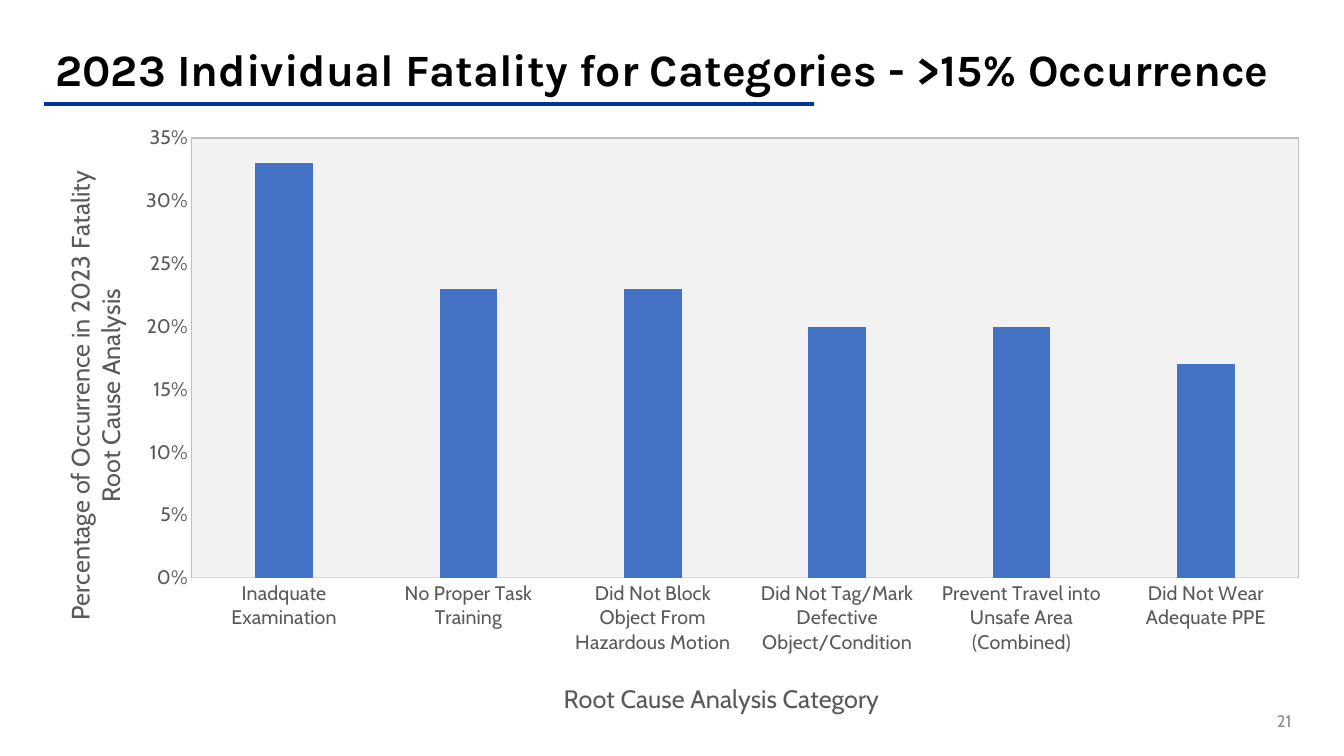
"""Build the 2023 root cause category slide with its column chart."""
import pptx
import pptx.chart.data
import pptx.dml.color
import pptx.enum.chart
import pptx.enum.shapes
import pptx.enum.text
import pptx.oxml
import pptx.oxml.ns
import pptx.util

WIDTH, HEIGHT = 13.33, 7.5
MARGIN = 0.45
CONTENT = WIDTH - 2 * MARGIN
HEADING = "2023 Individual Fatality for Categories - >15% Occurrence"
PAGE = "21"
CATEGORY_TITLE = "Root Cause Analysis Category"
VALUE_TITLE = "Percentage of Occurrence in 2023 Fatality Root Cause Analysis"
CAUSES = {
    "Inadquate Examination": 0.33,
    "No Proper Task Training": 0.23,
    "Did Not Block Object From Hazardous Motion": 0.23,
    "Did Not Tag/Mark Defective Object/Condition": 0.2,
    "Prevent Travel into Unsafe Area (Combined)": 0.2,
    "Did Not Wear Adequate PPE": 0.17,
}
COLORS = {"black": "000000", "rule": "0033A0", "page": "8C8C8C", "label": "595959",
          "bar": "4472C4", "plot": "F2F2F2", "border": "BFBFBF", "axis": "D9D9D9"}
ALIGN = pptx.enum.text.PP_ALIGN
inches = pptx.util.Inches
qn = pptx.oxml.ns.qn


def rgb(name):
    return pptx.dml.color.RGBColor.from_string(COLORS[name])


def style_font(font, size, color, face="Cabin", bold=False):
    font.name, font.size, font.bold = face, pptx.util.Pt(size), bold
    font.color.rgb = rgb(color)


def write(frame, text, size, color, align=None, spacing=None, **font):
    paragraph = frame.paragraphs[0]
    paragraph.alignment, paragraph.line_spacing = align, spacing
    run = paragraph.add_run()
    run.text = text
    style_font(run.font, size, color, **font)


def place(part, index, **shares):
    """Give a chart part a manual layout in shares of the chart's size."""
    for layout in part.findall(qn("c:layout")):
        part.remove(layout)
    target = '<c:layoutTarget val="inner"/>' if "w" in shares else ""
    modes = '<c:xMode val="edge"/><c:yMode val="edge"/>'
    sizes = "".join(f'<c:{key} val="{share}"/>' for key, share in shares.items())
    part.insert(index, pptx.oxml.parse_xml(
        f'<c:layout {pptx.oxml.ns.nsdecls("c")}><c:manualLayout>'
        f'{target}{modes}{sizes}</c:manualLayout></c:layout>'))


def style_axis(axis, title, x, y):
    axis.has_major_gridlines = False
    axis.major_tick_mark = axis.minor_tick_mark = pptx.enum.chart.XL_TICK_MARK.NONE
    style_font(axis.tick_labels.font, 14, "label")
    write(axis.axis_title.text_frame, title, 18, "label")
    place(axis.axis_title._element, 1, x=x, y=y)


def add_cause_chart(slide):
    causes = pptx.chart.data.CategoryChartData(number_format="0%")
    causes.categories = list(CAUSES)
    causes.add_series("Series 1", list(CAUSES.values()))
    chart = slide.shapes.add_chart(
        pptx.enum.chart.XL_CHART_TYPE.COLUMN_CLUSTERED, inches(MARGIN), inches(1.17),
        inches(CONTENT), inches(6.03), causes).chart
    chart.has_title = chart.has_legend = False
    style_font(chart.font, 10, "black")

    columns = chart.plots[0]
    columns.vary_by_categories = False
    columns.gap_width, columns.overlap = 219, -27
    bars = columns.series[0].format
    bars.fill.solid()
    bars.fill.fore_color.rgb = rgb("bar")

    style_axis(chart.category_axis, CATEGORY_TITLE, 0.41, 0.92)
    chart.category_axis.format.line.color.rgb = rgb("axis")
    chart.category_axis.format.line.width = pptx.util.Pt(0.75)

    percent = chart.value_axis
    style_axis(percent, VALUE_TITLE, 0.01, 0.08)
    percent.minimum_scale, percent.maximum_scale, percent.major_unit = 0, 0.35, 0.05
    percent.tick_labels.number_format = "0%"
    percent.tick_labels.number_format_is_linked = False
    percent.format.line.fill.background()

    plot_area = columns._element.getparent()
    place(plot_area, 0, x=0.117, y=0.033, w=0.883, h=0.724)
    plot_area.append(pptx.oxml.parse_xml(
        f'<c:spPr {pptx.oxml.ns.nsdecls("c", "a")}>'
        f'<a:solidFill><a:srgbClr val="{COLORS["plot"]}"/></a:solidFill>'
        f'<a:ln w="9525"><a:solidFill><a:srgbClr val="{COLORS["border"]}"/></a:solidFill></a:ln>'
        '</c:spPr>'))


def main():
    deck = pptx.Presentation()
    deck.slide_width, deck.slide_height = inches(WIDTH), inches(HEIGHT)
    slide = deck.slides.add_slide(deck.slide_layouts[5])

    rule = slide.shapes.add_connector(
        pptx.enum.shapes.MSO_CONNECTOR.STRAIGHT,
        inches(0.44), inches(1.03), inches(8.07), inches(1.03))
    rule.line.color.rgb = rgb("rule")
    rule.line.width = pptx.util.Pt(3)
    rule._element.spPr.append(pptx.oxml.parse_xml(
        f'<a:effectLst {pptx.oxml.ns.nsdecls("a")}/>'))

    heading = slide.shapes.title
    heading.left, heading.top = inches(MARGIN), inches(0.4)
    heading.width, heading.height = inches(CONTENT), inches(0.63)
    page = slide.shapes.add_textbox(inches(12.31), inches(6.95), inches(0.6), inches(0.4))
    for box in (heading, page):
        box.text_frame.word_wrap = True
        box.text_frame.auto_size = pptx.enum.text.MSO_AUTO_SIZE.NONE
        box.text_frame.vertical_anchor = pptx.enum.text.MSO_ANCHOR.MIDDLE
    write(heading.text_frame, HEADING, 32, "black", align=ALIGN.LEFT, spacing=0.9,
          face="Karla", bold=True)
    write(page.text_frame, PAGE, 12, "page", align=ALIGN.RIGHT)

    add_cause_chart(slide)
    deck.save("out.pptx")


if __name__ == "__main__":
    main()
